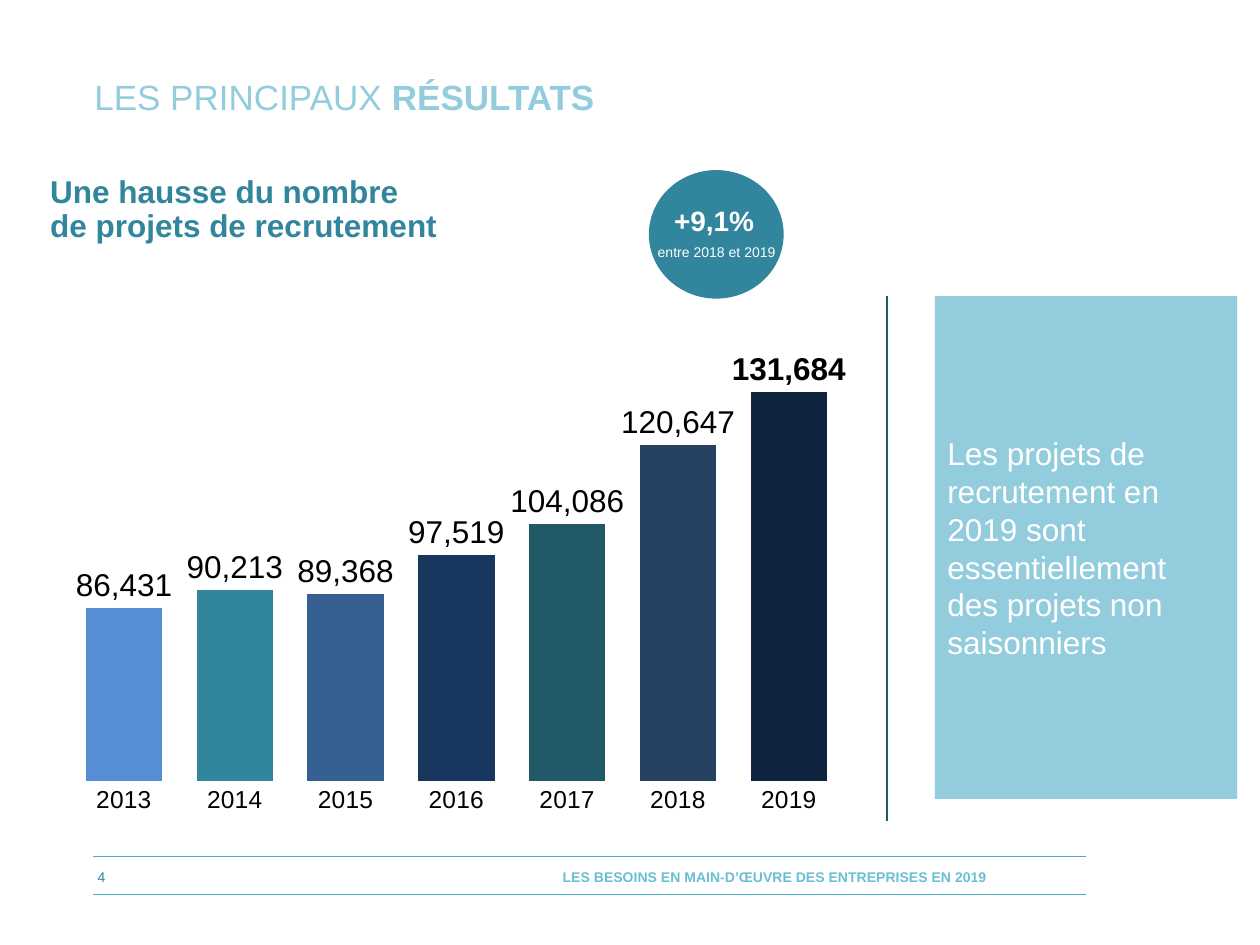
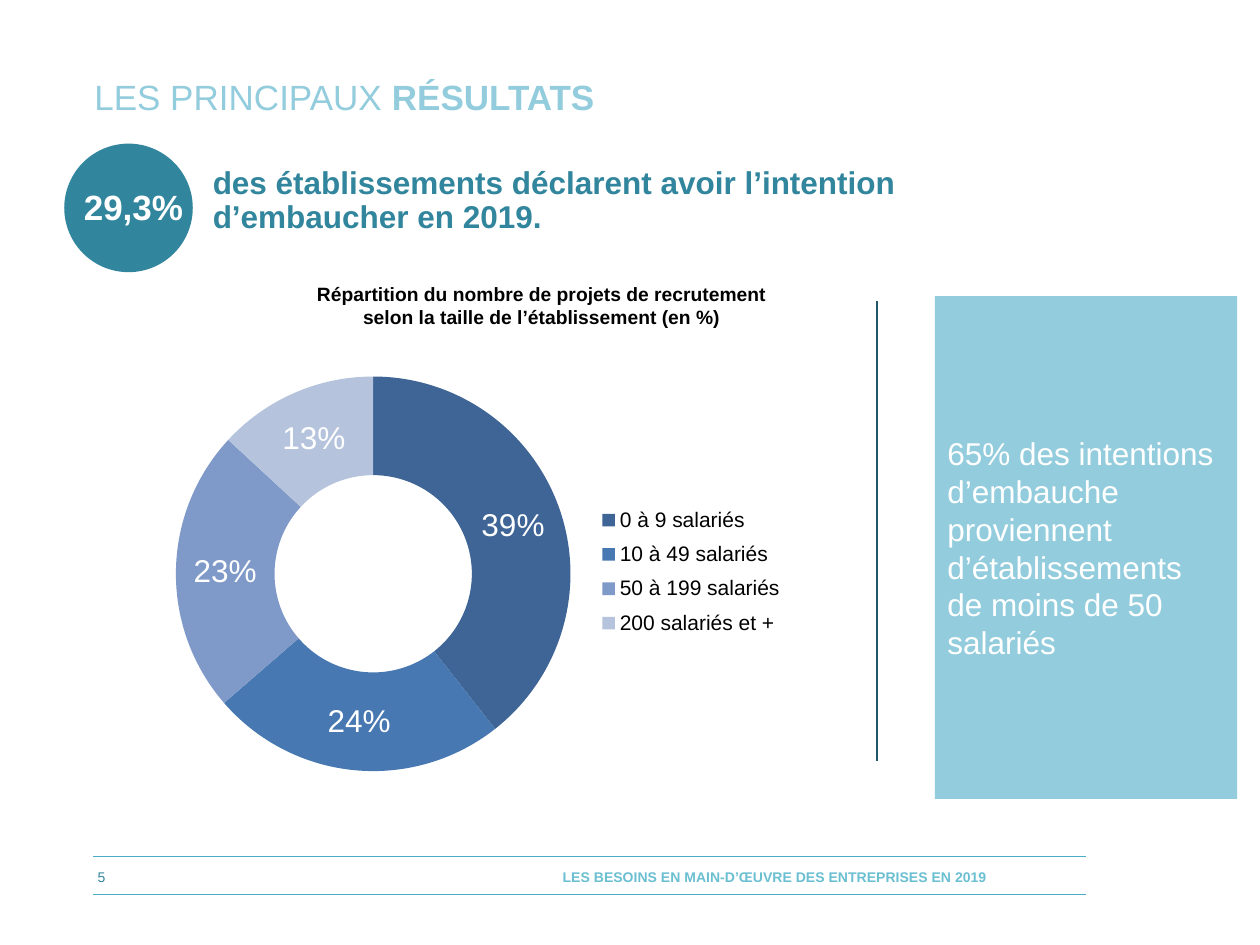
from lxml import etree
from pptx import Presentation
from pptx.chart.data import CategoryChartData
from pptx.dml.color import RGBColor
from pptx.enum.chart import (
    XL_CHART_TYPE as ChartType,
    XL_LABEL_POSITION as LabelPos,
    XL_LEGEND_POSITION as LegendPos,
    XL_TICK_MARK as Tick,
)
from pptx.enum.shapes import MSO_CONNECTOR as Connector, MSO_SHAPE as Shape
from pptx.enum.text import MSO_ANCHOR as Anchor, PP_ALIGN as Align
from pptx.oxml.ns import qn
from pptx.util import Inches, Pt

FONT = "Arial"
COLORS = {
    "sky": "93CDDD",
    "teal": "31859C",
    "deep_teal": "215968",
    "footer_line": "4BACC6",
    "footer_text": "6ABFD1",
    "white": "FFFFFF",
    "black": "000000",
}
YEAR_COLORS = ["558ED5", "31859C", "376092", "17375E", "215968", "254061", "0F243E"]
SIZE_COLORS = ["3E6595", "4878B1", "7F9AC8", "B5C3DC"]
PROJECTS = {
    "2013": 86431, "2014": 90213, "2015": 89368, "2016": 97519,
    "2017": 104086, "2018": 120647, "2019": 131684,
}
SHARES = {
    "0 à 9 salariés": 39, "10 à 49 salariés": 24,
    "50 à 199 salariés": 23, "200 salariés et +": 13,
}


def rgb(color):
    return RGBColor.from_string(COLORS.get(color, color))


def style_font(font, size, color="black", bold=False):
    font.name = FONT
    font.size = Pt(size)
    font.bold = bold
    font.color.rgb = rgb(color)


def set_insets(frame, left=0.1, top=0.05, right=0.1, bottom=0.05):
    frame.margin_left, frame.margin_right = Inches(left), Inches(right)
    frame.margin_top, frame.margin_bottom = Inches(top), Inches(bottom)


# Text, shapes and lines

def add_text(slide, box, text, size, color, bold=False, align=Align.LEFT,
             anchor=Anchor.TOP, spacing=1.0, insets=()):
    frame = slide.shapes.add_textbox(*map(Inches, box)).text_frame
    frame.word_wrap = True
    frame.vertical_anchor = anchor
    set_insets(frame, *insets)
    paragraph = frame.paragraphs[0]
    paragraph.text = text
    paragraph.alignment = align
    paragraph.line_spacing = spacing
    for run in paragraph.runs:
        style_font(run.font, size, color, bold)
    return paragraph


def add_filled(slide, preset, box, color):
    shape = slide.shapes.add_shape(preset, *map(Inches, box))
    shape.shadow.inherit = False
    shape.fill.solid()
    shape.fill.fore_color.rgb = rgb(color)
    shape.line.fill.background()
    return shape


def add_line(slide, start, end, color, width):
    line = slide.shapes.add_connector(Connector.STRAIGHT, *map(Inches, start + end))
    line.line.color.rgb = rgb(color)
    line.line.width = Pt(width)
    etree.SubElement(line.element.spPr, qn("a:effectLst"))


def add_headline(slide, box, text):
    add_text(slide, box, text, 18, "teal", bold=True, spacing=0.9,
             insets=(0.1, 0.05, 0, 0.05))


def add_badge(slide, circle, captions):
    """Teal disc with (box, text, size, bold, alignment) captions on it."""
    add_filled(slide, Shape.OVAL, circle, "teal")
    for box, text, size, bold, align in captions:
        add_text(slide, box, text, size, "white", bold, align, spacing=0.9,
                 insets=(0, 0.05, 0, 0.05))


def add_key_message(slide, text):
    panel = add_filled(slide, Shape.RECTANGLE, (7.42, 2.35, 2.4, 3.99), "sky")
    frame = panel.text_frame
    frame.word_wrap = True
    frame.vertical_anchor = Anchor.MIDDLE
    set_insets(frame)
    frame.text = text
    frame.paragraphs[0].alignment = Align.LEFT
    style_font(frame.paragraphs[0].runs[0].font, 18, "white")


def add_base_slide(deck, number):
    slide = deck.slides.add_slide(deck.slide_layouts[6])
    # Footer
    for y in (6.8, 7.1):
        add_line(slide, (0.74, y), (8.62, y), "footer_line", 0.5)
    add_text(slide, (3.59, 6.81, 5.12, 0.3),
             "LES BESOINS EN MAIN-D’ŒUVRE DES ENTREPRISES EN 2019", 8,
             "footer_text", True, Align.CENTER, Anchor.MIDDLE,
             insets=(0.1, 0, 0.1, 0))
    add_text(slide, (0.53, 6.76, 0.55, 0.4), str(number), 8, "teal",
             align=Align.CENTER, anchor=Anchor.MIDDLE)
    # Title
    title = add_text(slide, (0.65, 0.59, 8.89, 0.4), "LES PRINCIPAUX ", 20,
                     "sky", anchor=Anchor.MIDDLE, spacing=0.9)
    keyword = title.add_run()
    keyword.text = "RÉSULTATS"
    style_font(keyword.font, 20, "sky", bold=True)
    return slide


# Charts

def set_layout(parent, index, x, y, w, h, inner=False):
    """Place a chart part by fractions of the chart area."""
    for old in parent.findall(qn("c:layout")):
        parent.remove(old)
    layout = etree.Element(qn("c:layout"))
    manual = etree.SubElement(layout, qn("c:manualLayout"))
    settings = {"xMode": "edge", "yMode": "edge", "x": x, "y": y, "w": w, "h": h}
    if inner:
        settings = {"layoutTarget": "inner", **settings}
    for tag, value in settings.items():
        etree.SubElement(manual, qn(f"c:{tag}")).set("val", str(value))
    parent.insert(index, layout)


def add_colored_chart(slide, kind, box, values, colors, plot_box):
    data = CategoryChartData(number_format="#,##0")
    data.categories = list(values)
    data.add_series("Series 1", list(values.values()))
    chart = slide.shapes.add_chart(kind, *map(Inches, box), data).chart
    chart.has_title = False
    chart.has_legend = False
    style_font(chart.font, 10)
    set_layout(chart.element.chart.plotArea, 0, *plot_box, inner=True)
    for index, color in enumerate(colors):
        fill = chart.plots[0].series[0].points[index].format.fill
        fill.solid()
        fill.fore_color.rgb = rgb(color)
    return chart


def add_projects_chart(slide):
    chart = add_colored_chart(slide, ChartType.COLUMN_CLUSTERED,
                              (0.35, 2.29, 6.48, 4.3), PROJECTS, YEAR_COLORS,
                              (0.03, 0.03, 0.95, 0.88))
    plot = chart.plots[0]
    plot.vary_by_categories = False
    plot.gap_width = 45
    plot.overlap = 21

    years = chart.category_axis
    years.major_tick_mark = Tick.NONE
    years.format.line.fill.background()
    style_font(years.tick_labels.font, 14)
    counts = chart.value_axis
    counts.minimum_scale, counts.maximum_scale = 50000, 150000
    counts.major_unit = 50000
    counts.has_major_gridlines = False
    counts.visible = False

    labels = plot.series[0].data_labels
    labels.show_value = True
    labels.number_format = "#,##0"
    labels.number_format_is_linked = False
    labels.position = LabelPos.OUTSIDE_END
    style_font(labels.font, 18)
    latest = plot.series[0].points[len(PROJECTS) - 1].data_label
    style_font(latest.font, 18, bold=True)
    latest.position = LabelPos.OUTSIDE_END


def add_shares_chart(slide):
    chart = add_colored_chart(slide, ChartType.DOUGHNUT,
                              (0.99, 2.76, 5.8, 3.59), SHARES, SIZE_COLORS,
                              (0.07, 0.05, 0.54, 0.9))
    labels = chart.plots[0].series[0].data_labels
    labels.show_value = False
    labels.show_percentage = True
    labels.number_format = "0%"
    labels.number_format_is_linked = False
    style_font(labels.font, 18, "white")

    chart.has_legend = True
    chart.legend.position = LegendPos.RIGHT
    chart.legend.include_in_layout = False
    style_font(chart.legend.font, 12)
    set_layout(chart.element.chart.legend, 1, 0.64, 0.33, 0.27, 0.33)


# Slides

def build_projects_slide(deck):
    slide = add_base_slide(deck, 4)
    add_headline(slide, (0.3, 1.35, 4.19, 0.65),
                 "Une hausse du nombre\vde projets de recrutement")
    add_line(slide, (7.04, 2.35), (7.04, 6.52), "deep_teal", 1)
    add_badge(slide, (5.15, 1.35, 1.07, 1.02), [
        ((5.35, 1.6, 0.7, 0.34), "+9,1%", 16, True, Align.LEFT),
        ((5.22, 1.9, 1, 0.22), "entre 2018 et 2019", 8, False, Align.LEFT),
    ])
    add_key_message(slide, "Les projets de recrutement en 2019 sont "
                           "essentiellement des projets non saisonniers")
    add_projects_chart(slide)


def build_shares_slide(deck):
    slide = add_base_slide(deck, 5)
    add_headline(slide, (1.59, 1.28, 6.02, 0.65),
                 "des établissements déclarent avoir l’intention "
                 "d’embaucher en 2019.")
    add_line(slide, (6.96, 2.39), (6.96, 6.04), "deep_teal", 1)
    add_badge(slide, (0.51, 1.14, 1.02, 1.02), [
        ((0.66, 1.46, 0.8, 0.4), "29,3%", 20, True, Align.CENTER),
    ])
    add_shares_chart(slide)
    add_text(slide, (1.8, 2.19, 5, 0.47),
             "Répartition du nombre de projets de recrutement\v"
             "selon la taille de l’établissement (en %)",
             11, "black", True, Align.CENTER)
    add_key_message(slide, "65% des intentions d’embauche proviennent "
                           "d’établissements de moins de 50 salariés")


def main():
    deck = Presentation()
    deck.slide_width, deck.slide_height = Inches(10), Inches(7.5)
    build_projects_slide(deck)
    build_shares_slide(deck)
    deck.save("out.pptx")


if __name__ == "__main__":
    main()
